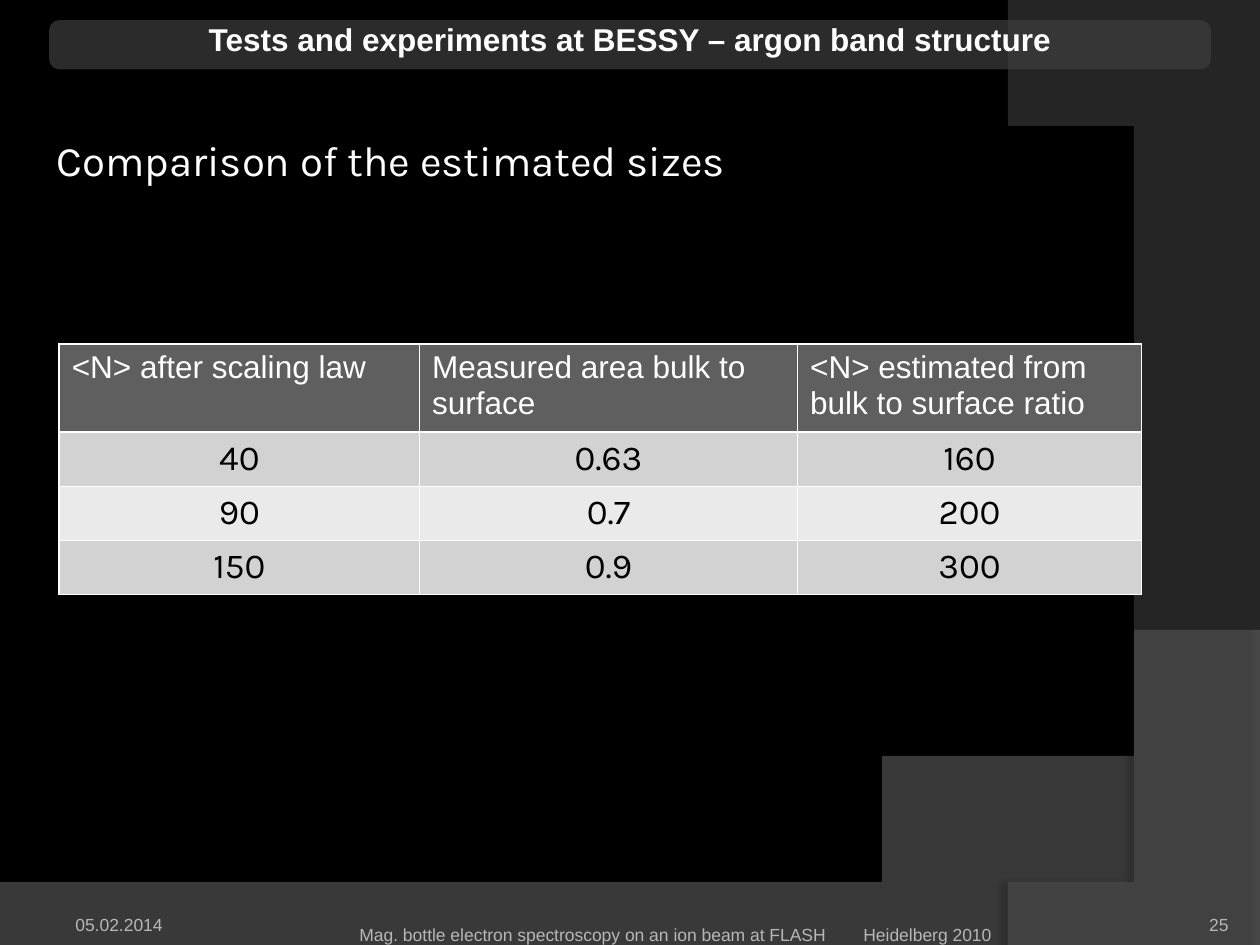
from lxml.etree import SubElement
from pptx import Presentation
from pptx.dml.color import RGBColor
from pptx.enum.shapes import MSO_SHAPE
from pptx.enum.text import MSO_ANCHOR, MSO_AUTO_SIZE, PP_ALIGN
from pptx.oxml.ns import qn
from pptx.util import Inches, Pt

# Content
TITLE = "Tests and experiments at BESSY – argon band structure"
BODY = "Comparison of the estimated sizes"
HEAD = ["<N> after scaling law", "Measured area bulk to surface",
        "<N> estimated from bulk to surface ratio"]
DATA = [("40", "0.63", "160"), ("90", "0.7", "200"), ("150", "0.9", "300")]
COLS = [2.86, 3, 2.73]
ROWS = [0.7] + [0.43] * len(DATA)

# Small texts: text, place, alignment, insets (left, top, right, bottom)
NOTES = [
    ("25", (8.92, 7.02, 0.83, 0.4), PP_ALIGN.RIGHT, (0, 0, 0, 0)),
    ("Mag. bottle electron spectroscopy on an ion beam at FLASH\tHeidelberg 2010",
     (2.34, 7.1, 6.04, 0.4), PP_ALIGN.CENTER, (0, 0.05, 0, 0)),
    ("05.02.2014", (0.5, 7.02, 2.33, 0.4), PP_ALIGN.LEFT, (0.1, 0.05, 0.1, 0)),
]

# Background waves: corner points, then one curve (start, two controls, end)
WAVES = [
    dict(line=[(0, 7.05), (0, 7.5), (10, 7.5)],
         curve=[(10, 5.2), (5.59, 7.29), (3.91, 7.19), (0, 7.05)],
         fill="7F7F7F", alpha=45, shade=(35, 3.5, 270)),
    dict(line=[(10, 0.02), (10, 7.5)],
         curve=[(8.21, 7.5), (9.35, 6.19), (10.18, 3), (8, 0)],
         fill="5E5E5E", alpha=40, shade=(45, 4, 180)),
]

THEME = dict(back="000000", text="FFFFFF", dim="B7B7B7", band="3E3E3E",
             head="5F5F5F", odd="D2D2D2", even="EAEAEA", ink="000000",
             sans="Arial", main="Karla",
             title=18, body=24, th=18, td=20, note=10)


def rgb(key):
    return RGBColor.from_string(THEME.get(key, key))


def style(para, face, size, tint, align=PP_ALIGN.LEFT, bold=False):
    para.alignment = align
    font = para.font
    font.name, font.size, font.bold = THEME[face], Pt(THEME[size]), bold
    font.color.rgb = rgb(tint)


def place(shape, box):
    shape.left, shape.top, shape.width, shape.height = map(Inches, box)


def paint(shape, tint, alpha):
    shape.shadow.inherit = False
    shape.fill.solid()
    shape.fill.fore_color.rgb = rgb(tint)
    shape.line.fill.background()
    clr = shape._element.spPr.find(qn("a:solidFill"))[0]
    SubElement(clr, qn("a:alpha"), val=str(alpha * 1000))


def shade(shape, alpha, dist, angle):
    glow = shape._element.spPr.find(qn("a:effectLst"))
    outer = SubElement(glow, qn("a:outerShdw"), blurRad=str(Pt(4)),
                       dist=str(Pt(dist)), dir=str(angle * 60000))
    clr = SubElement(outer, qn("a:srgbClr"), val="000000")
    SubElement(clr, qn("a:alpha"), val=str(alpha * 1000))


def bezier(pts, steps=60):
    for i in range(steps + 1):
        t = i / steps
        mix = ((1 - t) ** 3, 3 * t * (1 - t) ** 2, 3 * t * t * (1 - t), t ** 3)
        yield tuple(sum(m * p[k] for m, p in zip(mix, pts)) for k in (0, 1))


def border(cell):
    props = cell._tc.get_or_add_tcPr()
    for i, side in enumerate(("lnL", "lnR", "lnT", "lnB")):
        line = props.makeelement(qn("a:" + side), {"w": str(Pt(1))})
        fill = SubElement(line, qn("a:solidFill"))
        SubElement(fill, qn("a:srgbClr"), val=THEME["text"])
        props.insert(i, line)


deck = Presentation()
deck.slide_width, deck.slide_height = Inches(10), Inches(7.5)
slide = deck.slides.add_slide(deck.slide_layouts[1])
shapes = slide.shapes
slide.background.fill.solid()
slide.background.fill.fore_color.rgb = rgb("back")

# Waves and title band
for wave in WAVES:
    pts = wave["line"] + list(bezier(wave["curve"]))
    pen = shapes.build_freeform(*pts[0], scale=Inches(1))
    pen.add_line_segments(pts[1:], close=True)
    shape = pen.convert_to_shape()
    paint(shape, wave["fill"], wave["alpha"])
    shade(shape, *wave["shade"])

band = shapes.add_shape(MSO_SHAPE.ROUNDED_RECTANGLE, 0, 0, 0, 0)
place(band, (0.39, 0.16, 9.22, 0.39))
band.adjustments[0] = 0.2
paint(band, "band", 70)

# Table
frame = shapes.add_table(len(ROWS), len(COLS), Inches(0.47), Inches(2.73),
                         Inches(sum(COLS)), Inches(sum(ROWS)))
table = frame.table
for col, wide in zip(table.columns, COLS):
    col.width = Inches(wide)
for row, high in zip(table.rows, ROWS):
    row.height = Inches(high)
for r, texts in enumerate([HEAD] + DATA):
    for c, text in enumerate(texts):
        cell = table.cell(r, c)
        cell.text = text
        para = cell.text_frame.paragraphs[0]
        if r == 0:
            style(para, "sans", "th", "text")
        else:
            style(para, "main", "td", "ink", PP_ALIGN.CENTER)
        cell.fill.solid()
        cell.fill.fore_color.rgb = rgb("head" if r == 0 else "odd" if r % 2 else "even")
        border(cell)

# Title and body, brought in front of the band
title, body = shapes.title, slide.placeholders[1]
for shape, text, box in ((body, BODY, (0.31, 1.02, 9.22, 0.94)),
                         (title, TITLE, (0.39, 0.11, 9.22, 0.4))):
    place(shape, box)
    text_box = shape.text_frame
    text_box.text = text
    text_box.auto_size = MSO_AUTO_SIZE.NONE
    text_box.vertical_anchor = MSO_ANCHOR.TOP
    shapes._spTree.append(shape._element)
style(title.text_frame.paragraphs[0], "sans", "title", "text", PP_ALIGN.CENTER, True)
para = body.text_frame.paragraphs[0]
style(para, "main", "body", "text")
para.space_before = Pt(5)
props = para._p.get_or_add_pPr()
props.set("marL", str(Inches(0.46)))
props.set("indent", str(Inches(-0.42)))
props.insert_element_before(props.makeelement(qn("a:buNone"), {}),
                            "a:tabLst", "a:defRPr", "a:extLst")

# Footer
for text, box, align, pads in NOTES:
    note = shapes.add_textbox(*map(Inches, box)).text_frame
    note.word_wrap = True
    note.vertical_anchor = MSO_ANCHOR.BOTTOM
    (note.margin_left, note.margin_top,
     note.margin_right, note.margin_bottom) = map(Inches, pads)
    note.text = text
    style(note.paragraphs[0], "sans", "note", "dim", align)

deck.save("out.pptx")
